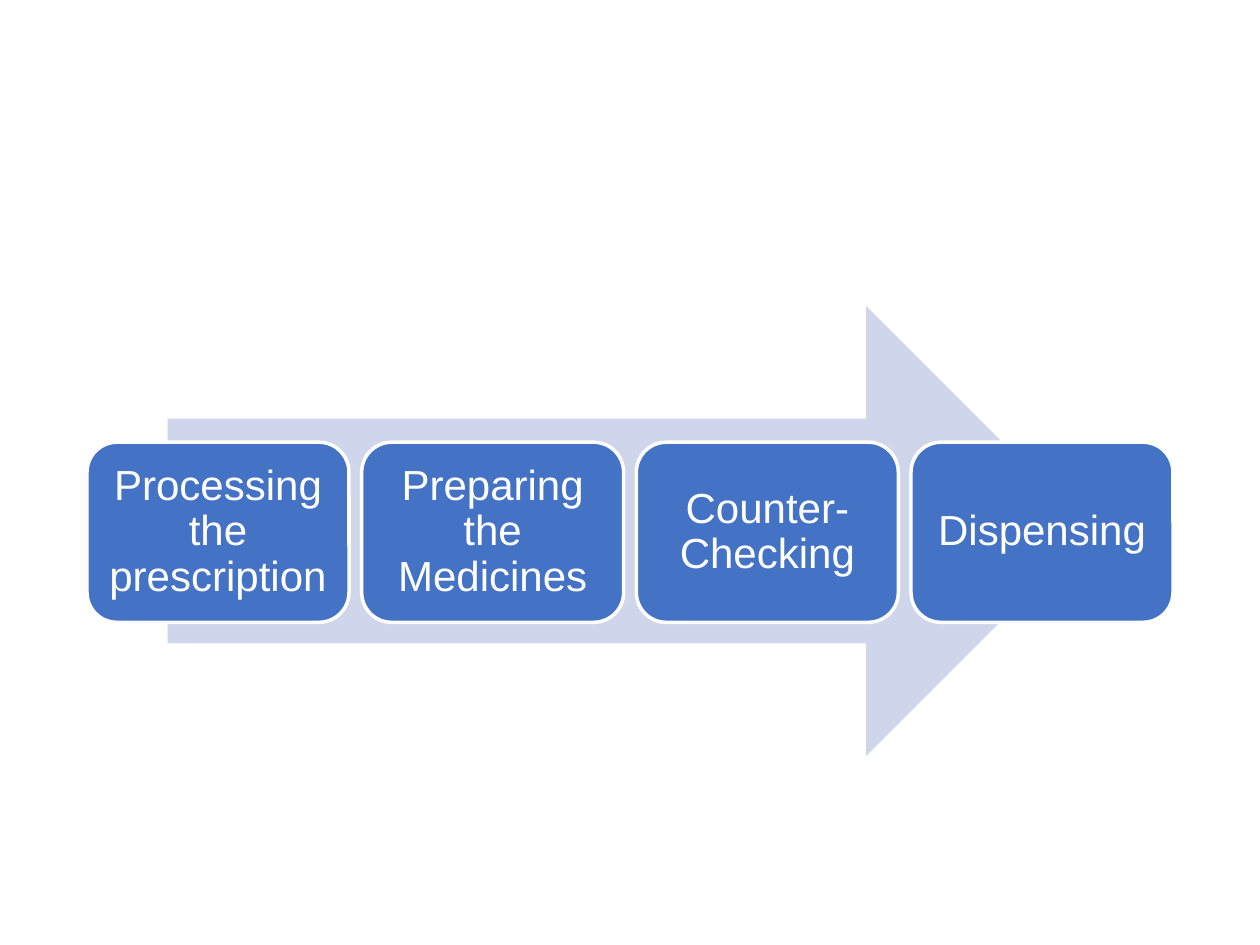
import pptx
import pptx.dml.color
import pptx.enum.shapes
import pptx.enum.text
import pptx.util

Inches = pptx.util.Inches
Pt = pptx.util.Pt
RGBColor = pptx.dml.color.RGBColor
SHAPE = pptx.enum.shapes.MSO_SHAPE

PALE_BLUE = RGBColor(0xCF, 0xD5, 0xEA)
BLUE = RGBColor(0x44, 0x72, 0xC4)
WHITE = RGBColor(0xFF, 0xFF, 0xFF)

STEPS = [
    "Processing the prescription",
    "Preparing the Medicines",
    "Counter-Checking",
    "Dispensing",
]
STEP_GAP = 0.1


def add_filled_shape(page, kind, left, top, width, height, color):
    shape = page.shapes.add_shape(
        kind, Inches(left), Inches(top), Inches(width), Inches(height))
    shape.shadow.inherit = False
    shape.fill.solid()
    shape.fill.fore_color.rgb = color
    return shape


def add_arrow(page, left, top, width, height):
    arrow = add_filled_shape(
        page, SHAPE.RIGHT_ARROW, left, top, width, height, PALE_BLUE)
    arrow.line.fill.background()


def add_step(page, text, left, top, width, height):
    step = add_filled_shape(
        page, SHAPE.ROUNDED_RECTANGLE, left, top, width, height, BLUE)
    step.line.color.rgb = WHITE
    step.line.width = Pt(2)
    frame = step.text_frame
    frame.word_wrap = True
    frame.vertical_anchor = pptx.enum.text.MSO_ANCHOR.MIDDLE
    frame.margin_left = frame.margin_right = Inches(0.1)
    frame.margin_top = frame.margin_bottom = Inches(0.1)
    para = frame.paragraphs[0]
    para.text = text
    para.alignment = pptx.enum.text.PP_ALIGN.CENTER
    para.line_spacing = 0.9
    para.font.name = "Arial"
    para.font.size = Pt(24)
    para.font.color.rgb = WHITE


def add_steps(page, left, top, width, height):
    """Share the box equally between the steps, with a gap between them."""
    step_width = (width - STEP_GAP * (len(STEPS) - 1)) / len(STEPS)
    for index, text in enumerate(STEPS):
        step_left = left + index * (step_width + STEP_GAP)
        add_step(page, text, step_left, top, step_width, height)


def main():
    deck = pptx.Presentation()
    deck.slide_width = Inches(10)
    deck.slide_height = Inches(7.5)
    page = deck.slides.add_slide(deck.slide_layouts[6])
    add_arrow(page, 1.33, 2.43, 7.33, 3.57)
    add_steps(page, 0.69, 3.51, 8.62, 1.43)
    deck.save("out.pptx")


if __name__ == "__main__":
    main()
